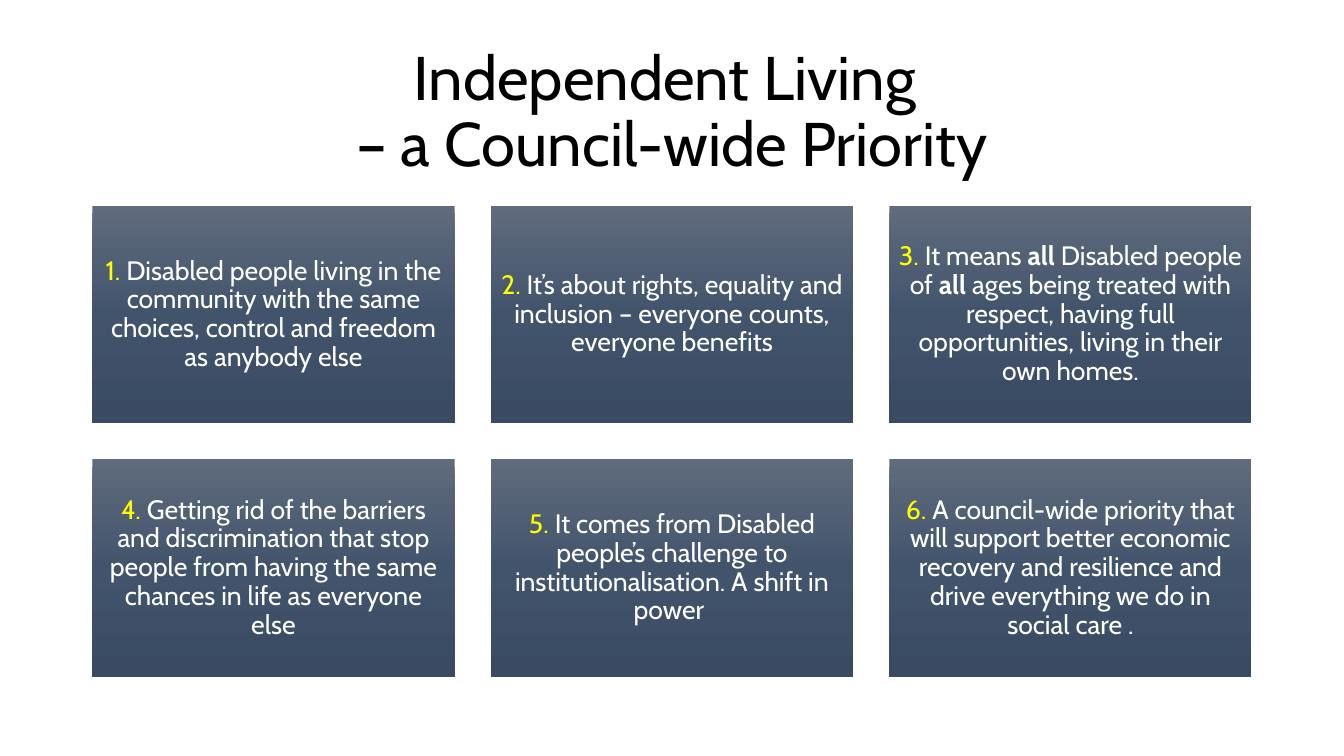
from copy import deepcopy
from dataclasses import dataclass

from pptx import Presentation
from pptx.dml.color import RGBColor
from pptx.enum.shapes import MSO_SHAPE
from pptx.enum.text import MSO_ANCHOR, PP_ALIGN
from pptx.oxml.ns import qn
from pptx.util import Pt

TITLE = "Independent Living \v– a Council-wide Priority"
# Each card is a list of text pieces; every second piece is bold.
CARDS = [
    ["Disabled people living in the community with the same choices, "
     "control and freedom as anybody else"],
    ["It’s about rights, equality and inclusion – everyone counts, "
     "everyone benefits"],
    ["It means ", "all", " Disabled people of ", "all ",
     "ages being treated with respect, having full opportunities, "
     "living in their own homes."],
    ["Getting rid of the barriers and discrimination that stop people "
     "from having the same chances in life as everyone else"],
    ["It comes from Disabled people’s challenge to institutionalisation. "
     "A shift in power "],
    ["A council-wide priority that will support better economic recovery "
     "and resilience and drive everything we do in social care ."],
]


@dataclass(frozen=True)
class Theme:
    font: str = "Cabin"
    title_size: int = 44
    card_size: int = 19
    title: str = "000000"
    number: str = "FFFF00"
    text: str = "FFFFFF"
    gradient: tuple = ("606B7D", "42546C", "394A62")


THEME = Theme()
COLUMNS = 3
LEFT, TOP = 66, 147
CARD_W, CARD_H = 258.75, 155.25
GAP = 25.87
INSET = 5.7


def rgb(value):
    return RGBColor.from_string(value)


def format_paragraph(p, size):
    p.alignment = PP_ALIGN.CENTER
    p.line_spacing = 0.9
    p.font.name = THEME.font
    p.font.size = Pt(size)


def fill_gradient(sp):
    """Fill from top to bottom with three evenly spaced theme colours."""
    fill = sp.fill
    fill.gradient()
    fill.gradient_angle = 270
    first = sp.element.spPr.find(".//" + qn("a:gs"))
    middle = deepcopy(first)
    middle.set("pos", "50000")
    first.addnext(middle)
    for stop, color in zip(fill.gradient_stops, THEME.gradient):
        stop.color.rgb = rgb(color)


def add_title(slide):
    sp = slide.shapes.title
    sp.left, sp.top, sp.width, sp.height = Pt(LEFT), Pt(28.75), Pt(828), Pt(104.4)
    tf = sp.text_frame
    tf.vertical_anchor = MSO_ANCHOR.MIDDLE
    p = tf.paragraphs[0]
    p.text = TITLE
    format_paragraph(p, THEME.title_size)
    p.font.color.rgb = rgb(THEME.title)


def add_card(slide, index, pieces):
    row, col = divmod(index, COLUMNS)
    sp = slide.shapes.add_shape(
        MSO_SHAPE.RECTANGLE,
        Pt(LEFT + col * (CARD_W + GAP)), Pt(TOP + row * (CARD_H + GAP)),
        Pt(CARD_W), Pt(CARD_H))
    sp.shadow.inherit = False
    sp.line.fill.background()
    fill_gradient(sp)
    tf = sp.text_frame
    tf.word_wrap = True
    tf.vertical_anchor = MSO_ANCHOR.MIDDLE
    tf.margin_left = tf.margin_right = tf.margin_top = tf.margin_bottom = Pt(INSET)
    p = tf.paragraphs[0]
    format_paragraph(p, THEME.card_size)
    p.font.color.rgb = rgb(THEME.text)
    number = p.add_run()
    number.text = f"{index + 1}. "
    number.font.color.rgb = rgb(THEME.number)
    for i, piece in enumerate(pieces):
        r = p.add_run()
        r.text = piece
        if i % 2:
            r.font.bold = True


def main():
    prs = Presentation()
    prs.slide_width, prs.slide_height = Pt(960), Pt(540)
    slide = prs.slides.add_slide(prs.slide_layouts[5])
    add_title(slide)
    for index, pieces in enumerate(CARDS):
        add_card(slide, index, pieces)
    prs.save("out.pptx")


if __name__ == "__main__":
    main()
